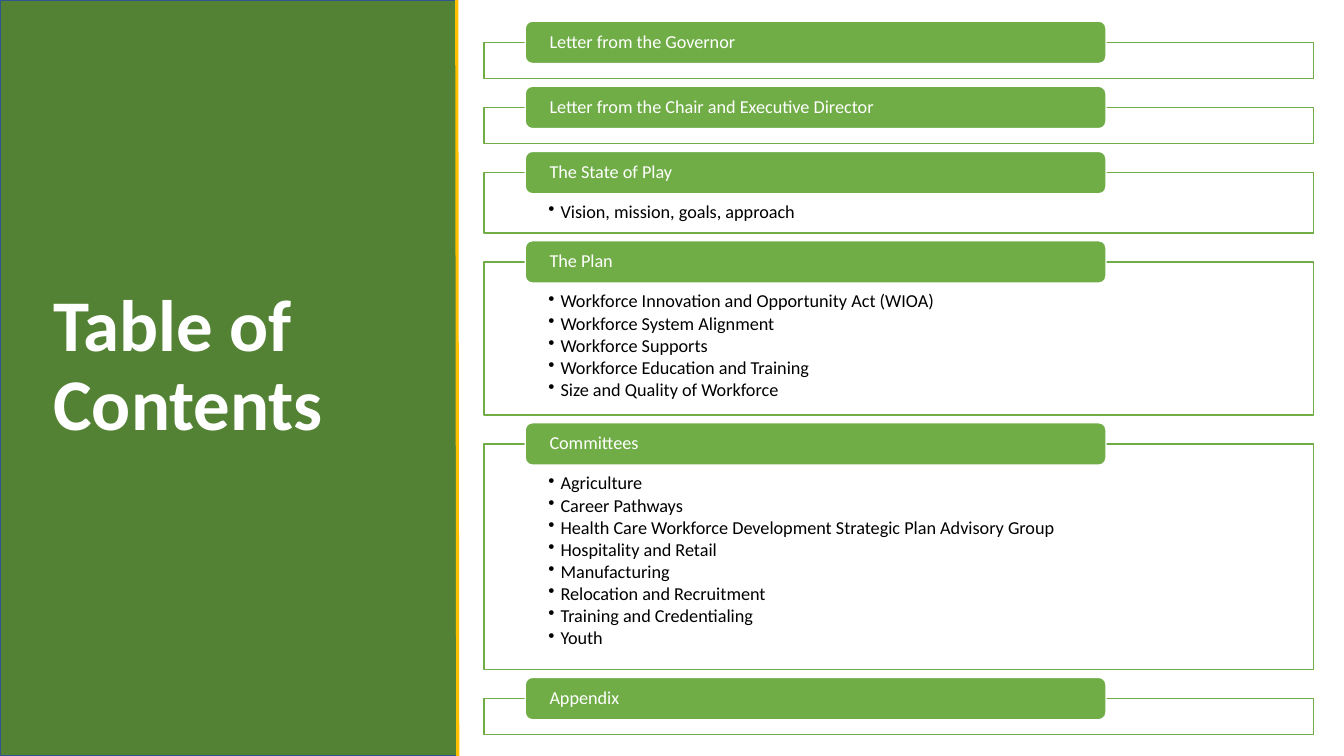
from dataclasses import dataclass

import pptx
import pptx.dml.color
import pptx.enum.shapes
import pptx.enum.text
import pptx.oxml
import pptx.oxml.ns
import pptx.presentation
import pptx.shapes.autoshape
import pptx.slide
import pptx.text.text
import pptx.util
from lxml import etree
from pptx.dml.color import RGBColor
from pptx.enum.shapes import MSO_SHAPE
from pptx.enum.text import MSO_ANCHOR
from pptx.util import Inches

WHITE = RGBColor(0xFF, 0xFF, 0xFF)
BLACK = RGBColor(0x00, 0x00, 0x00)
DARK_GREEN = RGBColor(0x54, 0x82, 0x35)
GREEN = RGBColor(0x70, 0xAD, 0x47)
NAVY = RGBColor(0x32, 0x54, 0x91)
GOLD = RGBColor(0xFF, 0xC0, 0x00)

FRAME_LEFT, FRAME_WIDTH = 4.8, 8.23
FIRST_FRAME_TOP, LAST_FRAME_TOP = 0.42, 6.93
HEADER_LEFT, HEADER_WIDTH, HEADER_HEIGHT = 5.21, 5.76, 0.42


@dataclass(frozen=True)
class Section:
    heading: str
    frame_height: float = 0.36
    topics: tuple[str, ...] = ()


SECTIONS = (
    Section("Letter from the Governor"),
    Section("Letter from the Chair and Executive Director"),
    Section("The State of Play", 0.6, ("Vision, mission, goals, approach",)),
    Section("The Plan", 1.52, (
        "Workforce Innovation and Opportunity Act (WIOA)",
        "Workforce System Alignment",
        "Workforce Supports",
        "Workforce Education and Training",
        "Size and Quality of Workforce",
    )),
    Section("Committees", 2.24, (
        "Agriculture",
        "Career Pathways",
        "Health Care Workforce Development Strategic Plan Advisory Group",
        "Hospitality and Retail",
        "Manufacturing",
        "Relocation and Recruitment",
        "Training and Credentialing",
        "Youth",
    )),
    Section("Appendix"),
)


def add_bullet(paragraph: pptx.text.text._Paragraph) -> None:
    properties = paragraph._p.get_or_add_pPr()
    properties.set("marL", str(Inches(0.12)))
    properties.set("indent", str(Inches(-0.12)))
    bullet = etree.SubElement(properties, pptx.oxml.ns.qn("a:buChar"))
    bullet.set("char", "•")


def write_text(
    shape: pptx.shapes.autoshape.Shape,
    *lines: str,
    size: float = 13,
    color: RGBColor = WHITE,
    bold: bool = False,
    bullets: bool = False,
    space_after: float = 0,
    anchor: MSO_ANCHOR = MSO_ANCHOR.MIDDLE,
    margins: tuple[float, float, float, float] = (0.22, 0, 0.22, 0),
) -> None:
    """Fill a shape with one paragraph per line; margins run left, top, right, bottom."""
    frame = shape.text_frame
    frame.word_wrap = True
    frame.auto_size = pptx.enum.text.MSO_AUTO_SIZE.NONE
    frame.vertical_anchor = anchor
    (frame.margin_left, frame.margin_top,
     frame.margin_right, frame.margin_bottom) = map(Inches, margins)
    for index, line in enumerate(lines):
        paragraph = frame.add_paragraph() if index else frame.paragraphs[0]
        paragraph.alignment = pptx.enum.text.PP_ALIGN.LEFT
        paragraph.line_spacing = 0.9
        paragraph.space_before = pptx.util.Pt(0)
        paragraph.space_after = pptx.util.Pt(space_after)
        if bullets:
            add_bullet(paragraph)
        run = paragraph.add_run()
        run.text = line
        run.font.name = "Calibri"
        run.font.size = pptx.util.Pt(size)
        run.font.bold = bold
        run.font.color.rgb = color


def add_box(
    slide: pptx.slide.Slide,
    preset: MSO_SHAPE,
    left: float,
    top: float,
    width: float,
    height: float,
    fill: RGBColor,
    line: RGBColor,
) -> pptx.shapes.autoshape.Shape:
    shape = slide.shapes.add_shape(
        preset, Inches(left), Inches(top), Inches(width), Inches(height))
    shape.shadow.inherit = False
    shape.fill.solid()
    shape.fill.fore_color.rgb = fill
    shape.line.color.rgb = line
    shape.line.width = pptx.util.Pt(1)
    return shape


def add_section(slide: pptx.slide.Slide, section: Section, top: float) -> None:
    """Draw the outlined frame with its topics, then the header over its top edge."""
    frame = add_box(slide, MSO_SHAPE.RECTANGLE, FRAME_LEFT, top,
                    FRAME_WIDTH, section.frame_height, WHITE, GREEN)
    fill_color = frame.element.spPr.find(".//" + pptx.oxml.ns.qn("a:srgbClr"))
    etree.SubElement(fill_color, pptx.oxml.ns.qn("a:alpha")).set("val", "90000")
    if section.topics:
        write_text(frame, *section.topics, color=BLACK, bullets=True,
                   space_after=1.75, anchor=MSO_ANCHOR.TOP,
                   margins=(0.64, 0.3, 0.64, 0.1))
    header = add_box(slide, MSO_SHAPE.ROUNDED_RECTANGLE, HEADER_LEFT,
                     top - HEADER_HEIGHT / 2, HEADER_WIDTH, HEADER_HEIGHT,
                     GREEN, WHITE)
    write_text(header, section.heading)


def add_title(slide: pptx.slide.Slide) -> None:
    title = slide.shapes.title
    title.left, title.top = Inches(0.43), Inches(0.6)
    title.width, title.height = Inches(3.69), Inches(6.09)
    write_text(title, "Table of Contents", size=52, bold=True,
               margins=(0.1, 0.05, 0.1, 0.05))
    panel = add_box(slide, MSO_SHAPE.RECTANGLE, 0, 0, 4.53, 7.5, DARK_GREEN, NAVY)
    title.element.addprevious(panel.element)


def add_divider(slide: pptx.slide.Slide) -> None:
    divider = slide.shapes.add_connector(
        pptx.enum.shapes.MSO_CONNECTOR.STRAIGHT,
        Inches(4.54), Inches(7.5), Inches(4.53), Inches(0))
    divider.line.color.rgb = GOLD
    divider.line.width = pptx.util.Pt(2.25)
    etree.SubElement(divider.element.spPr, pptx.oxml.ns.qn("a:effectLst"))


def main() -> None:
    presentation = pptx.Presentation()
    presentation.slide_width = Inches(13.33)
    presentation.slide_height = Inches(7.5)
    slide = presentation.slides.add_slide(presentation.slide_layouts[5])

    add_title(slide)
    stacked_height = sum(section.frame_height for section in SECTIONS[:-1])
    gap = (LAST_FRAME_TOP - FIRST_FRAME_TOP - stacked_height) / (len(SECTIONS) - 1)
    top = FIRST_FRAME_TOP
    for section in SECTIONS:
        add_section(slide, section, top)
        top += section.frame_height + gap
    add_divider(slide)

    presentation.save("out.pptx")


if __name__ == "__main__":
    main()
